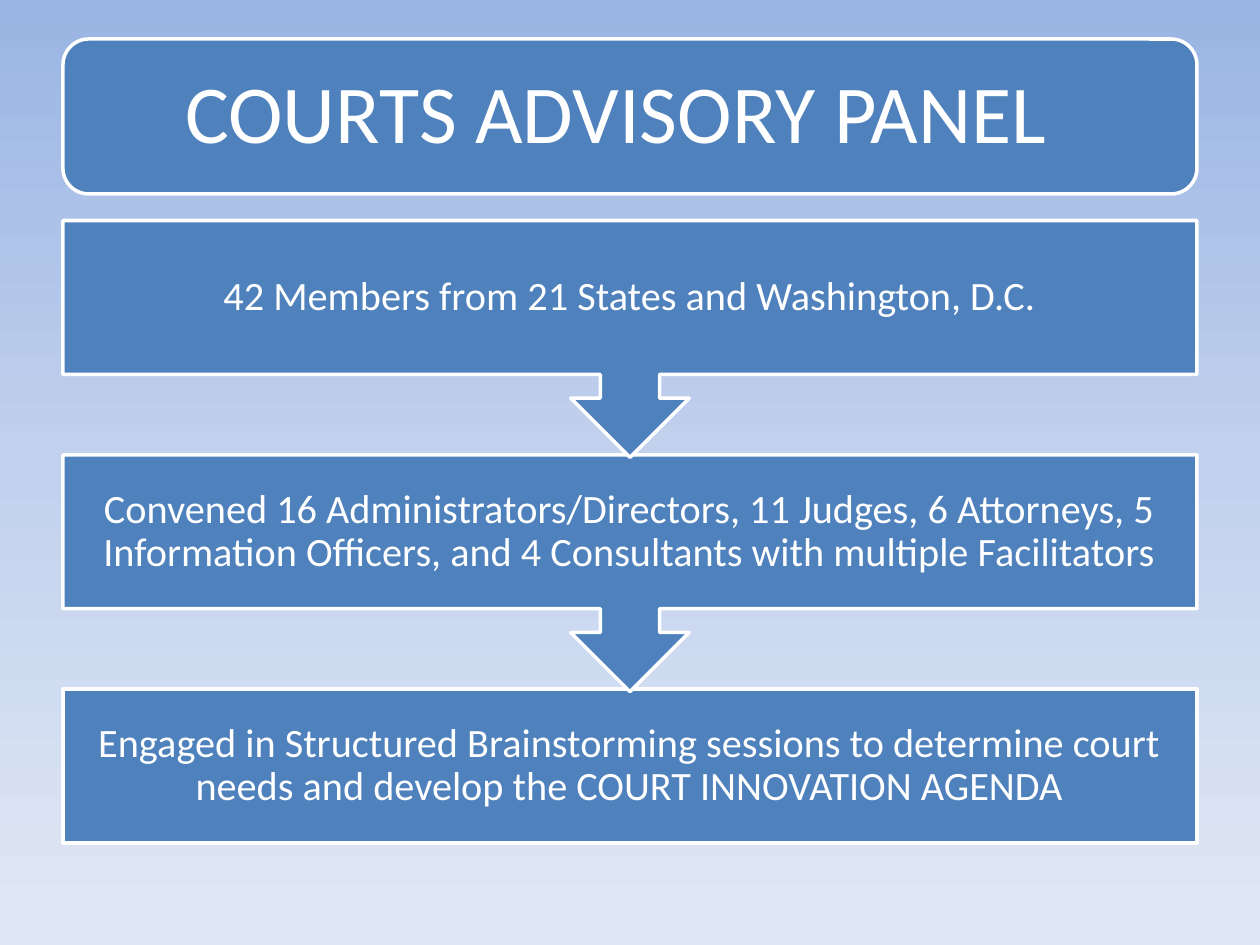
"""Build the courts advisory panel slide."""
import copy

import pptx
import pptx.dml.color
import pptx.enum.shapes
import pptx.enum.text
import pptx.util

Inches = pptx.util.Inches
RGBColor = pptx.dml.color.RGBColor
Shape = pptx.enum.shapes.MSO_SHAPE
Align = pptx.enum.text.PP_ALIGN

BLUE = RGBColor(0x4F, 0x81, 0xBD)
WHITE = RGBColor(0xFF, 0xFF, 0xFF)
SKY = (
    RGBColor(0x9A, 0xB5, 0xE4),
    RGBColor(0xC2, 0xD1, 0xED),
    RGBColor(0xE1, 0xE8, 0xF5),
)
LEFT, WIDTH = 0.5, 9
TOP, PITCH = 1.75, 1.86
BODY, CALL = 1.22, 1.88
STEPS = (
    "42 Members from 21 States and Washington, D.C.",
    "Convened 16 Administrators/Directors, 11 Judges, 6 Attorneys, 5 "
    "Information Officers, and 4 Consultants with multiple Facilitators",
    "Engaged in Structured Brainstorming sessions to determine court "
    "needs and develop the COURT INNOVATION AGENDA",
)


def paint_sky(slide):
    fill = slide.background.fill
    fill.gradient()
    fill.gradient_angle = 270
    stops = slide.element.xpath(".//a:gsLst")[0]
    stops.append(copy.deepcopy(stops[-1]))
    for i, (stop, color) in enumerate(zip(fill.gradient_stops, SKY)):
        stop.position = i / 2
        stop.color.rgb = color


def add_box(slide, kind, top, height, text, size, inset):
    box = slide.shapes.add_shape(
        kind, Inches(LEFT), Inches(top), Inches(WIDTH), Inches(height))
    box.shadow.inherit = False
    box.fill.solid()
    box.fill.fore_color.rgb = BLUE
    box.line.color.rgb = WHITE
    box.line.width = pptx.util.Pt(2)
    frame = box.text_frame
    frame.word_wrap = True
    frame.vertical_anchor = pptx.enum.text.MSO_ANCHOR.MIDDLE
    frame.margin_left = frame.margin_right = Inches(inset)
    frame.margin_top = frame.margin_bottom = Inches(inset)
    frame.text = text
    para = frame.paragraphs[0]
    para.alignment = Align.CENTER
    para.line_spacing = 0.9
    font = para.runs[0].font
    font.name = "Calibri"
    font.size = pptx.util.Pt(size)
    font.color.rgb = WHITE
    return box


def add_title(slide):
    box = add_box(slide, Shape.ROUNDED_RECTANGLE, 0.31, 1.23,
                  "COURTS ADVISORY PANEL", 47, 0.2)
    box.text_frame.margin_left = Inches(0.91)
    box.text_frame.paragraphs[0].alignment = Align.LEFT


def add_steps(slide):
    last = len(STEPS) - 1
    for i in range(last, -1, -1):
        kind, height = Shape.DOWN_ARROW_CALLOUT, CALL
        if i == last:
            kind, height = Shape.RECTANGLE, BODY
        add_box(slide, kind, TOP + i * PITCH, height, STEPS[i], 23, 0.18)


def main():
    deck = pptx.Presentation()
    deck.slide_width = Inches(10)
    deck.slide_height = Inches(7.5)
    slide = deck.slides.add_slide(deck.slide_layouts[6])
    paint_sky(slide)
    add_title(slide)
    add_steps(slide)
    deck.save("out.pptx")


if __name__ == "__main__":
    main()
